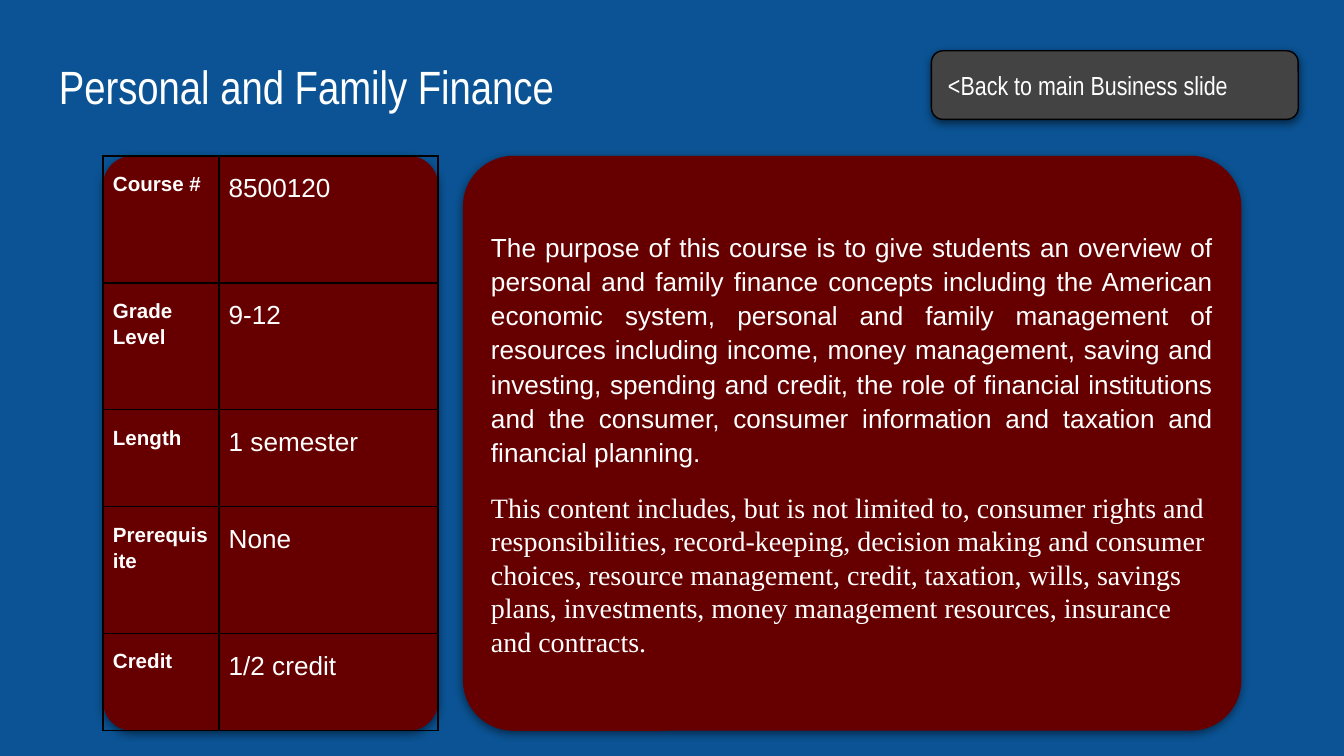
import pptx
import pptx.dml.color
import pptx.enum.shapes
import pptx.enum.text
import pptx.oxml
import pptx.oxml.ns
import pptx.util

Pt = pptx.util.Pt
ALIGN = pptx.enum.text.PP_ALIGN
ANCHOR = pptx.enum.text.MSO_ANCHOR
NAMESPACE = 'xmlns:a="http://schemas.openxmlformats.org/drawingml/2006/main"'
SHADOW = f"""<a:effectLst {NAMESPACE}>
<a:outerShdw blurRad="{Pt(4.5)}" dist="{Pt(1.5)}" dir="5400000" algn="bl" rotWithShape="0">
<a:srgbClr val="000000"><a:alpha val="50000"/></a:srgbClr>
</a:outerShdw></a:effectLst>"""

BLUE, MAROON, GRAY, BLACK, WHITE = "0B5394", "660000", "434343", "000000", "FFFFFF"
TOP, HEIGHT = 83.5, 308
FACTS_LEFT, FACTS_WIDTH = 55.25, 179.5
FACTS = [
    ("Course #", "8500120", 68),
    ("Grade Level", "9-12", 68),
    ("Length", "1 semester", 52),
    ("Prerequisite", "None", 68),
    ("Credit", "1/2 credit", 52),
]
PURPOSE = (
    "The purpose of this course is to give students an overview of personal and family "
    "finance concepts including the American economic system, personal and family "
    "management of resources including income, money management, saving and investing, "
    "spending and credit, the role of financial institutions and the consumer, consumer "
    "information and taxation and financial planning."
)
CONTENT = (
    "This content includes, but is not limited to, consumer rights and responsibilities, "
    "record-keeping, decision making and consumer choices, resource management, credit, "
    "taxation, wills, savings plans, investments, money management resources, insurance "
    "and contracts."
)


def color(value):
    return pptx.dml.color.RGBColor.from_string(value)


def apply(target, values):
    """Set each named attribute of target."""
    for name, value in values.items():
        setattr(target, name, value)


class SlideBuilder:
    def __init__(self, slide, text_color):
        self.slide = slide
        self.text_color = text_color

    def background(self, fill):
        self.slide.background.fill.solid()
        self.slide.background.fill.fore_color.rgb = color(fill)

    def add_paragraphs(self, frame, paragraphs):
        """Fill a frame with (text, font values, paragraph values) entries."""
        for index, (text, font, layout) in enumerate(paragraphs):
            para = frame.add_paragraph() if index else frame.paragraphs[0]
            apply(para, {"alignment": ALIGN.LEFT, **layout})
            span = para.add_run()
            span.text = text
            apply(span.font, font)
            span.font.color.rgb = color(self.text_color)

    def fill_frame(self, frame, paragraphs):
        inset = Pt(7.2)
        apply(frame, {
            "word_wrap": True, "vertical_anchor": ANCHOR.MIDDLE,
            "margin_left": inset, "margin_right": inset,
            "margin_top": inset, "margin_bottom": inset,
        })
        self.add_paragraphs(frame, paragraphs)

    def text(self, area, paragraphs):
        box = self.slide.shapes.add_textbox(*map(Pt, area))
        self.fill_frame(box.text_frame, paragraphs)

    def panel(self, area, fill, rounding, paragraphs=(), line=None):
        """Add a rounded rectangle with a soft shadow below it."""
        box = self.slide.shapes.add_shape(
            pptx.enum.shapes.MSO_SHAPE.ROUNDED_RECTANGLE, *map(Pt, area))
        box.adjustments[0] = rounding
        box.fill.solid()
        box.fill.fore_color.rgb = color(fill)
        if line:
            box.line.color.rgb = color(line)
            box.line.width = Pt(0.75)
        else:
            box.line.fill.background()
        box.shadow.inherit = False
        properties = box.element.spPr
        effects = properties.find(pptx.oxml.ns.qn("a:effectLst"))
        properties.replace(effects, pptx.oxml.parse_xml(SHADOW))
        self.fill_frame(box.text_frame, paragraphs)

    def cell_borders(self, cell, line):
        properties = cell._tc.get_or_add_tcPr()
        for index, side in enumerate(("lnL", "lnR", "lnT", "lnB")):
            properties.insert(index, pptx.oxml.parse_xml(
                f'<a:{side} {NAMESPACE} w="{Pt(1)}"><a:solidFill>'
                f'<a:srgbClr val="{line}"/></a:solidFill></a:{side}>'))

    def table(self, area, column_widths, rows, fonts, line):
        """Add a see-through table; each row is its texts followed by its height."""
        table = self.slide.shapes.add_table(
            len(rows), len(column_widths), *map(Pt, area)).table
        apply(table, {"first_row": False, "horz_banding": False})
        for column, width in zip(table.columns, column_widths):
            column.width = Pt(width)
        for row, (*texts, height) in zip(table.rows, rows):
            row.height = Pt(height)
            for cell, text, font in zip(row.cells, texts, fonts):
                apply(cell, {
                    "margin_left": Pt(5.25), "margin_right": Pt(5.25),
                    "margin_top": Pt(7.2), "margin_bottom": Pt(7.2),
                })
                cell.fill.background()
                self.cell_borders(cell, line)
                self.add_paragraphs(cell.text_frame, [(text, font, {"line_spacing": 1.15})])


def main():
    deck = pptx.Presentation()
    apply(deck, {"slide_width": Pt(720), "slide_height": Pt(405)})
    page = SlideBuilder(deck.slides.add_slide(deck.slide_layouts[6]), WHITE)
    page.background(BLUE)

    page.text((24.5, 23, 671, 45.5), [
        ("Personal and Family Finance", {"name": "Arial Narrow", "size": Pt(25)}, {})])

    facts_area = (FACTS_LEFT, TOP, FACTS_WIDTH, HEIGHT)
    page.panel(facts_area, MAROON, 0.088)
    page.panel((248, TOP, 417, HEIGHT), MAROON, 0.088, [
        (PURPOSE, {"name": "Arial", "size": Pt(14)},
         {"alignment": ALIGN.JUSTIFY, "line_spacing": 1.09}),
        (CONTENT, {"name": "Times New Roman", "size": Pt(15)}, {"space_before": Pt(12)}),
    ])
    page.table(facts_area, (62, FACTS_WIDTH - 62), FACTS, (
        {"name": "Arial", "size": Pt(11), "bold": True},
        {"name": "Arial", "size": Pt(14), "bold": False},
    ), BLACK)

    page.panel((499, 27.25, 196.5, 36.75), GRAY, 0.167, [
        ("<Back to main Business slide", {"name": "Arial Narrow", "size": Pt(14)}, {}),
    ], line=BLACK)
    deck.save("out.pptx")


if __name__ == "__main__":
    main()
